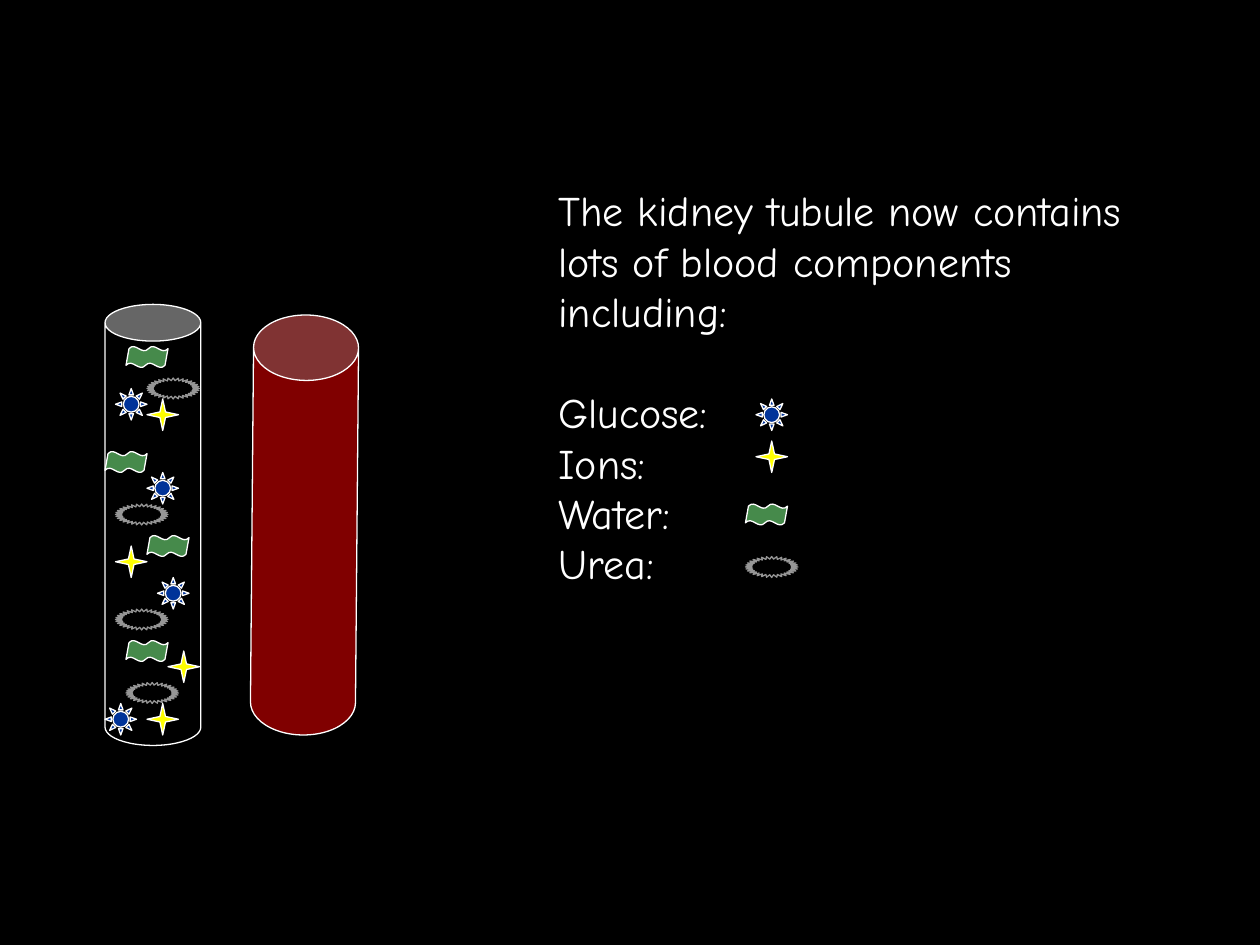
"""Build the slide on the blood components inside a kidney tubule."""
import pptx
import pptx.dml.color
import pptx.enum.shapes
import pptx.enum.text
import pptx.oxml
import pptx.oxml.ns
import pptx.util

PRESETS = pptx.enum.shapes.MSO_SHAPE
EMU_PER_PX = 9525
COLOURS = {
    "black": "000000", "white": "FFFFFF", "blood": "FF0000", "glucose": "003399",
    "ion": "FFFF00", "water": "468A4B", "urea": "969696",
}
COMPONENTS = {
    "glucose": dict(preset=PRESETS.SUN, size=(24, 24), adjust=[0.25], fill="glucose"),
    "ion": dict(preset=PRESETS.STAR_4_POINT, size=(24, 24), adjust=[0.125], fill="ion"),
    "water": dict(preset=PRESETS.DOUBLE_WAVE, size=(32, 16), adjust=[0.103, -0.036], fill="water"),
    "urea": dict(preset=PRESETS.STAR_32_POINT, size=(40, 16), adjust=[0.375], fill="black", line="urea"),
}
KEY = {"glucose": (576, 304), "ion": (576, 336), "water": (568, 384), "urea": (568, 424)}
TUBULE_CONTENTS = {
    "water": [(96, 488), (80, 344), (112, 408), (96, 264)],
    "glucose": [(88, 296), (112, 360), (80, 536), (120, 440)],
    "urea": [(88, 464), (96, 520), (88, 384), (112, 288)],
    "ion": [(88, 416), (112, 304), (112, 536), (128, 496)],
}


def px(length):
    """Turn px into EMU."""
    return pptx.util.Emu(length * EMU_PER_PX)


def rgb(name):
    """Look up a named colour."""
    return pptx.dml.color.RGBColor.from_string(COLOURS[name])


def write(paragraph, text, font="Comic Neue", size=24, colour="white", space_before=0):
    """Write formatted text into a paragraph."""
    paragraph.space_before = pptx.util.Pt(space_before)
    run = paragraph.add_run()
    run.text = text
    run.font.name = font
    run.font.size = pptx.util.Pt(size)
    run.font.color.rgb = rgb(colour)


class Painter:
    """Hold the line style and the current slide."""

    def __init__(self, slide, line_width=0.75):
        """Keep the slide and paint its background."""
        self.slide = slide
        self.line_width = pptx.util.Pt(line_width)
        slide.background.fill.solid()
        slide.background.fill.fore_color.rgb = rgb("black")

    def shape(self, preset, position, size, adjust, fill, line="white", opacity=100, rotation=0, parent=None):
        """Add a preset shape to the slide or to a group."""
        shapes = (parent or self.slide).shapes
        shape = shapes.add_shape(preset, *map(px, position + size))
        for index, value in enumerate(adjust):
            shape.adjustments[index] = value
        shape.shadow.inherit = False
        shape.rotation = rotation
        shape.fill.solid()
        shape.fill.fore_color.rgb = rgb(fill)
        shape.line.color.rgb = rgb(line)
        shape.line.width = self.line_width
        if opacity < 100:
            colour = shape.fill._xPr.find(".//" + pptx.oxml.ns.qn("a:srgbClr"))
            alpha = pptx.oxml.parse_xml(f'<a:alpha {pptx.oxml.ns.nsdecls("a")} val="{opacity * 1000}"/>')
            colour.append(alpha)

    def component(self, name, position, parent=None):
        """Add the symbol of one blood component."""
        self.shape(position=position, parent=parent, **COMPONENTS[name])

    def component_group(self, name, positions):
        """Add a group of equal symbols."""
        group = self.slide.shapes.add_group_shape()
        for position in positions:
            self.component(name, position, parent=group)

    def text(self, position, size, paragraphs):
        """Add a text box from pairs of text and format."""
        frame = self.slide.shapes.add_textbox(*map(px, position + size)).text_frame
        frame.word_wrap = True
        frame.auto_size = pptx.enum.text.MSO_AUTO_SIZE.SHAPE_TO_FIT_TEXT
        for index, (text, style) in enumerate(paragraphs):
            paragraph = frame.add_paragraph() if index else frame.paragraphs[0]
            write(paragraph, text, **style)


def main():
    """Build and save the presentation."""
    presentation = pptx.Presentation()
    presentation.slide_width, presentation.slide_height = px(960), px(720)
    painter = Painter(presentation.slides.add_slide(presentation.slide_layouts[6]))
    painter.shape(PRESETS.CAN, (80, 232), (73, 336), [0.383], "black")
    painter.shape(PRESETS.CAN, (192, 240), (80, 320), [0.623], "blood", opacity=50, rotation=0.5)
    painter.text((416, 136), (488, 317), [
        ("The kidney tubule now contains lots of blood components including:", {}),
        ("Glucose:", {"space_before": 29}),
        ("Ions:", {}),
        ("Water:", {}),
        ("Urea:", {}),
    ])
    for name, position in KEY.items():
        painter.component(name, position)
    for name, positions in TUBULE_CONTENTS.items():
        painter.component_group(name, positions)
    presentation.save("out.pptx")


if __name__ == "__main__":
    main()
